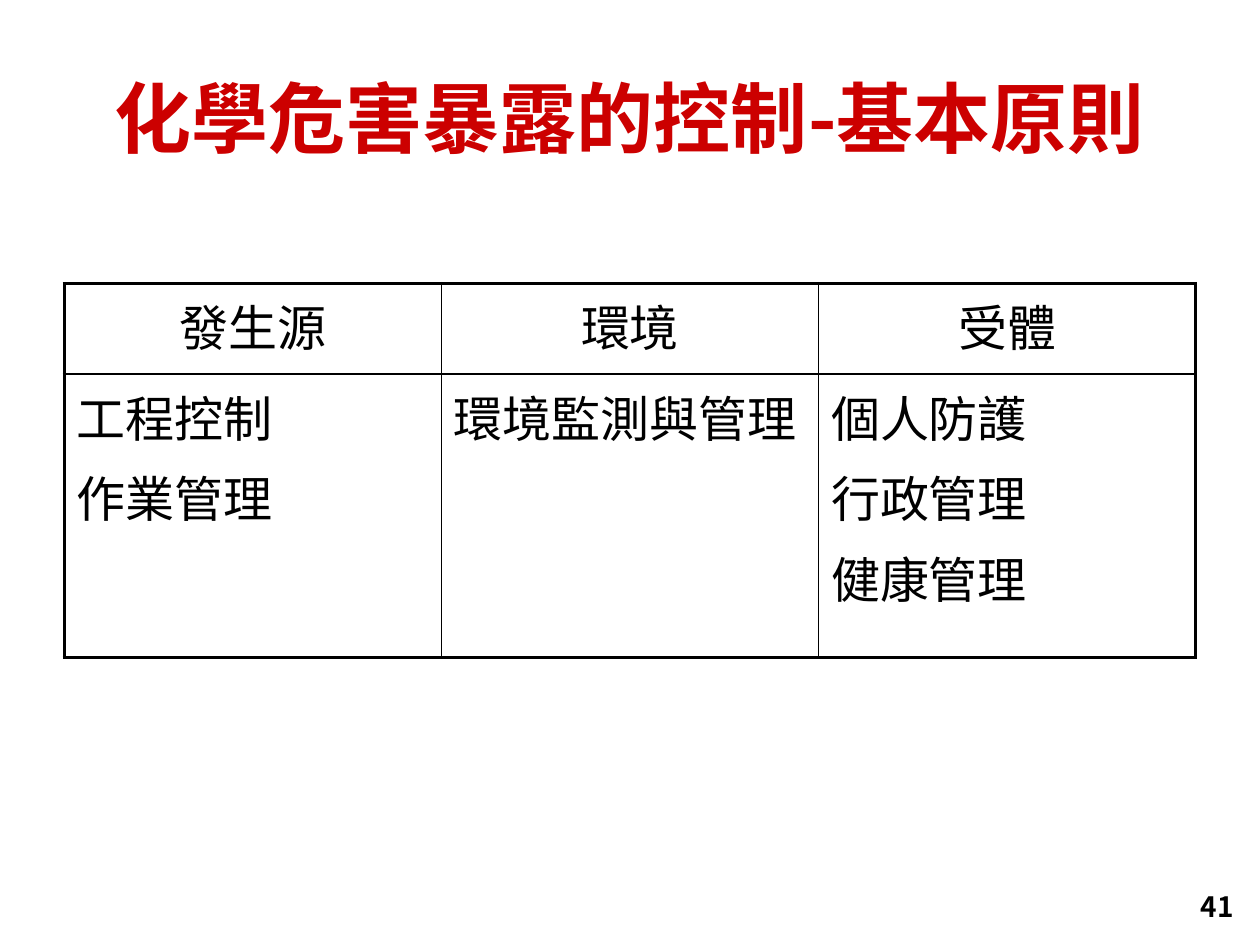
from dataclasses import dataclass

from lxml import etree
from pptx import Presentation
from pptx.dml.color import RGBColor
from pptx.enum import text
from pptx.oxml import ns
from pptx.util import Inches, Pt


@dataclass(frozen=True)
class Theme:
    font: str = "Noto Sans CJK SC"
    red: str = "CC0000"
    black: str = "000000"
    title_size: int = 44
    table_size: int = 28
    number_size: int = 16
    outer_line: float = 2.25
    inner_line: float = 1


THEME = Theme()
HEADINGS = ["發生源", "環境", "受體"]
MEASURES = [
    ["工程控制", "作業管理"],
    ["環境監測與管理"],
    ["個人防護", "行政管理", "健康管理"],
]


def style_paragraph(paragraph, size, color=THEME.black, bold=False, align=text.PP_ALIGN.LEFT):
    paragraph.alignment = align
    font = paragraph.font
    font.size, font.bold, font.name = Pt(size), bold, THEME.font
    font.color.rgb = RGBColor.from_string(color)
    # East Asian characters take their own typeface
    etree.SubElement(font._rPr, ns.qn("a:ea"), typeface=THEME.font)


def set_borders(cell, widths):
    """Draw the left, right, top and bottom borders, widths in points."""
    properties = cell._tc.get_or_add_tcPr()
    for index, (side, width) in enumerate(zip("LRTB", widths)):
        line = etree.Element(ns.qn(f"a:ln{side}"), w=str(Pt(width)))
        fill = etree.SubElement(line, ns.qn("a:solidFill"))
        etree.SubElement(fill, ns.qn("a:srgbClr"), val=THEME.black)
        properties.insert(index, line)


def fill_cell(cell, lines, align):
    cell.fill.background()
    cell.text = "\n".join(lines)
    for paragraph in cell.text_frame.paragraphs:
        style_paragraph(paragraph, THEME.table_size, align=align)
        paragraph.space_before = Pt(0.2 * THEME.table_size)


def add_title(slide, wording):
    title = slide.shapes.title
    title.left, title.top = Inches(0.5), Inches(0.3)
    title.width, title.height = Inches(9), Inches(1.25)
    title.text_frame.text = wording
    title.text_frame.vertical_anchor = text.MSO_ANCHOR.MIDDLE
    style_paragraph(title.text_frame.paragraphs[0], THEME.title_size, THEME.red,
                    bold=True, align=text.PP_ALIGN.CENTER)


def add_control_table(slide):
    rows = [[[heading] for heading in HEADINGS], MEASURES]
    aligns = [text.PP_ALIGN.CENTER, text.PP_ALIGN.LEFT]
    last_row, last_column = len(rows) - 1, len(HEADINGS) - 1
    table = slide.shapes.add_table(len(rows), len(HEADINGS), Inches(0.51), Inches(2.25),
                                   Inches(8.98), Inches(2.97)).table
    table.first_row = table.horz_banding = False
    for row, height in zip(table.rows, (0.72, 2.25)):
        row.height = Inches(height)

    for r, row in enumerate(rows):
        for c, lines in enumerate(row):
            cell = table.cell(r, c)
            fill_cell(cell, lines, aligns[r])
            # Heavy lines run around the outside only
            outside = (c == 0, c == last_column, r == 0, r == last_row)
            set_borders(cell, [THEME.outer_line if edge else THEME.inner_line
                               for edge in outside])


def add_page_number(slide, number):
    box = slide.shapes.add_textbox(Inches(7.06), Inches(7.01), Inches(2.83), Inches(0.52))
    box.text_frame.word_wrap = True
    box.text_frame.text = number
    style_paragraph(box.text_frame.paragraphs[0], THEME.number_size,
                    bold=True, align=text.PP_ALIGN.RIGHT)


def main():
    presentation = Presentation()
    presentation.slide_width, presentation.slide_height = Inches(10), Inches(7.5)
    slide = presentation.slides.add_slide(presentation.slide_layouts[5])  # title only
    add_title(slide, "化學危害暴露的控制-基本原則")
    add_control_table(slide)
    add_page_number(slide, "41")
    presentation.save("out.pptx")


if __name__ == "__main__":
    main()
